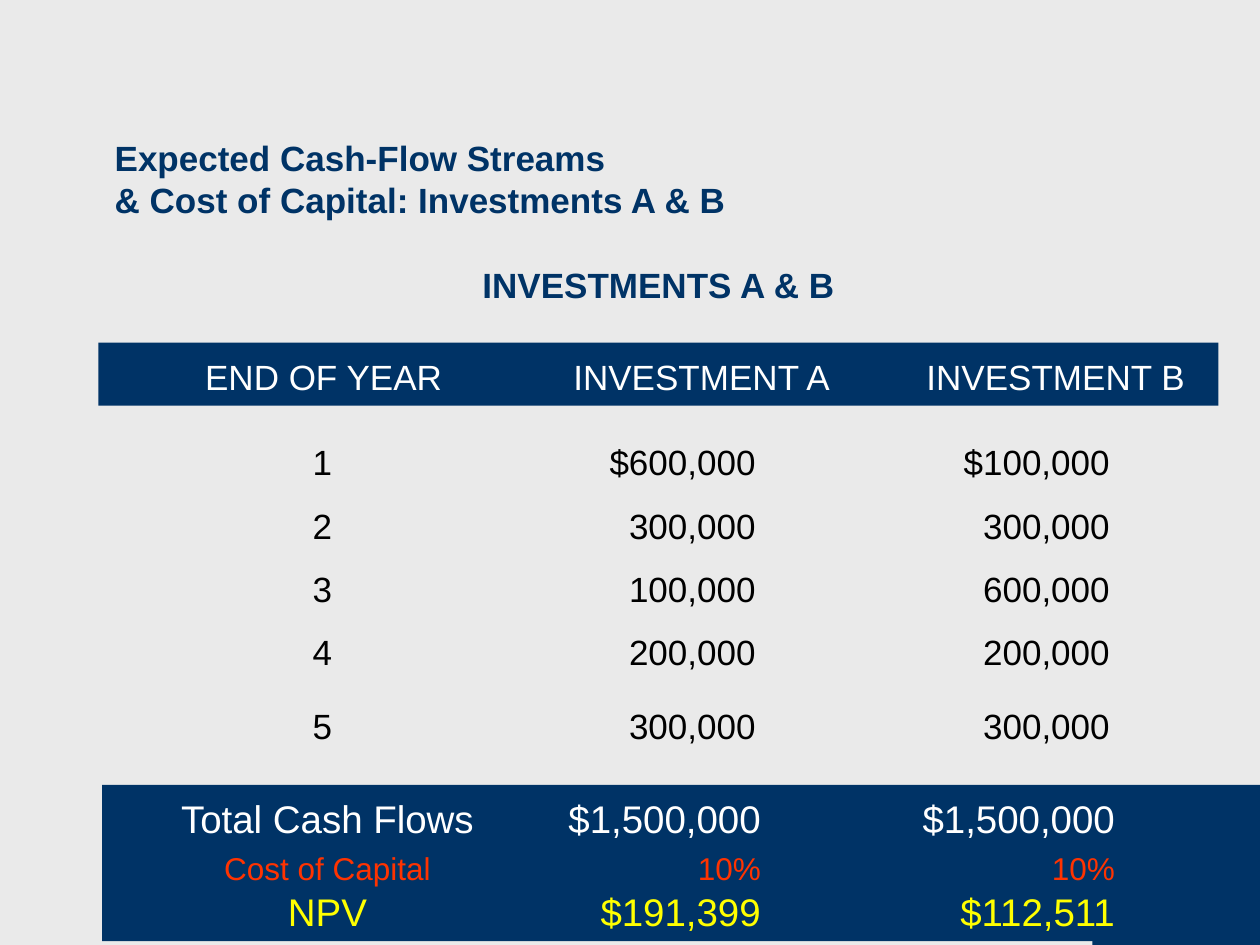
from dataclasses import dataclass
from pptx import Presentation, util as u
from pptx.dml.color import RGBColor
from pptx.enum import shapes, text
from pptx.oxml.ns import qn
from lxml import etree

HUES = {"back": "EAEAEA", "navy": "003366", "white": "FFFFFF",
        "black": "000000", "red": "FF3300", "gold": "FFFF00"}
HEADS = ((1.69, "ctr"), (4.69, "ctr"), (7.5, "ctr"))
SUMS = ((1.69, "ctr"), (5.13, "r"), (7.94, "r"))


@dataclass
class Row:
    cells: tuple[str, ...]
    size: int = 20
    hue: str = "black"
    lead: int = 20


@dataclass
class Block:
    box: tuple[float, float, float, float]
    rows: list[Row]
    tabs: tuple[tuple[float, str], ...] = SUMS
    fill: str = ""
    gap: float = 1.0


BLOCKS = [
    Block((8.67, 7, 1.33, 0.5), [], fill="navy"),
    Block((0.78, 2.72, 8.89, 0.5),
          [Row(("END OF YEAR", "INVESTMENT A", "INVESTMENT B"), hue="white", lead=24)],
          tabs=HEADS, fill="navy"),
    Block((0.77, 3.19, 8.89, 2.75), [
        Row(("1", "$600,000", "$100,000"), lead=24),
        Row(("2", "300,000", "300,000")),
        Row(("3", "100,000", "600,000")),
        Row(("4", "200,000", "200,000")),
        Row(("5", "300,000", "300,000"), lead=24)], gap=1.5),
    Block((0.81, 6.23, 9.19, 1.24), [
        Row(("Total Cash Flows", "$1,500,000", "$1,500,000"), 22, "white", 24),
        Row(("Cost of Capital", "10%", "10%"), 18, "red", 22),
        Row(("NPV", "$191,399", "$112,511"), 22, "gold", 22)], fill="navy"),
]


def color(hue: str) -> RGBColor:
    return RGBColor.from_string(HUES[hue])


def add_run(para, words: str, size: int, hue: str, bold: bool = False) -> None:
    run = para.add_run()
    run.text = words
    run.font.name = "Arial"
    run.font.size = u.Pt(size)
    run.font.bold = bold
    run.font.color.rgb = color(hue)


def set_tabs(para, tabs: tuple[tuple[float, str], ...]) -> None:
    stops = etree.SubElement(para._p.get_or_add_pPr(), qn("a:tabLst"))
    for pos, side in tabs:
        etree.SubElement(stops, qn("a:tab"), pos=str(int(u.Inches(pos))), algn=side)


def draw_block(slide, block: Block) -> None:
    box = [u.Inches(n) for n in block.box]
    if block.fill:
        shape = slide.shapes.add_shape(shapes.MSO_SHAPE.RECTANGLE, *box)
        shape.shadow.inherit = False
        shape.fill.solid()
        shape.fill.fore_color.rgb = color(block.fill)
        shape.line.fill.background()
    else:
        shape = slide.shapes.add_textbox(*box)
    frame = shape.text_frame
    frame.word_wrap = True
    frame.vertical_anchor = text.MSO_ANCHOR.TOP
    for i, row in enumerate(block.rows):
        para = frame.add_paragraph() if i else frame.paragraphs[0]
        para.alignment = text.PP_ALIGN.LEFT
        para.line_spacing = block.gap
        set_tabs(para, block.tabs)
        add_run(para, "\t", row.lead, "black")
        add_run(para, "\t".join(row.cells), row.size, row.hue)


def draw_title(slide) -> None:
    title = slide.shapes.title
    title.left, title.top, title.width, title.height = (
        u.Inches(n) for n in (0.81, 1.03, 8.93, 0.77))
    frame = title.text_frame
    frame.auto_size = text.MSO_AUTO_SIZE.NONE
    frame.vertical_anchor = text.MSO_ANCHOR.BOTTOM
    para = frame.paragraphs[0]
    para.alignment = text.PP_ALIGN.LEFT
    add_run(para, "Expected Cash-Flow Streams", 20, "navy", True)
    para.add_line_break()
    add_run(para, "& Cost of Capital: Investments A & B", 20, "navy", True)


def draw_label(slide) -> None:
    box = slide.shapes.add_textbox(*(u.Inches(n) for n in (3.73, 2.04, 3.02, 0.44)))
    box.text_frame.word_wrap = False
    add_run(box.text_frame.paragraphs[0], "INVESTMENTS A & B", 20, "navy", True)


def main() -> None:
    deck = Presentation()
    deck.slide_width, deck.slide_height = u.Inches(10), u.Inches(7.5)
    slide = deck.slides.add_slide(deck.slide_layouts[5])
    slide.background.fill.solid()
    slide.background.fill.fore_color.rgb = color("back")
    for block in BLOCKS:
        draw_block(slide, block)
    draw_label(slide)
    draw_title(slide)
    deck.save("out.pptx")


if __name__ == "__main__":
    main()
